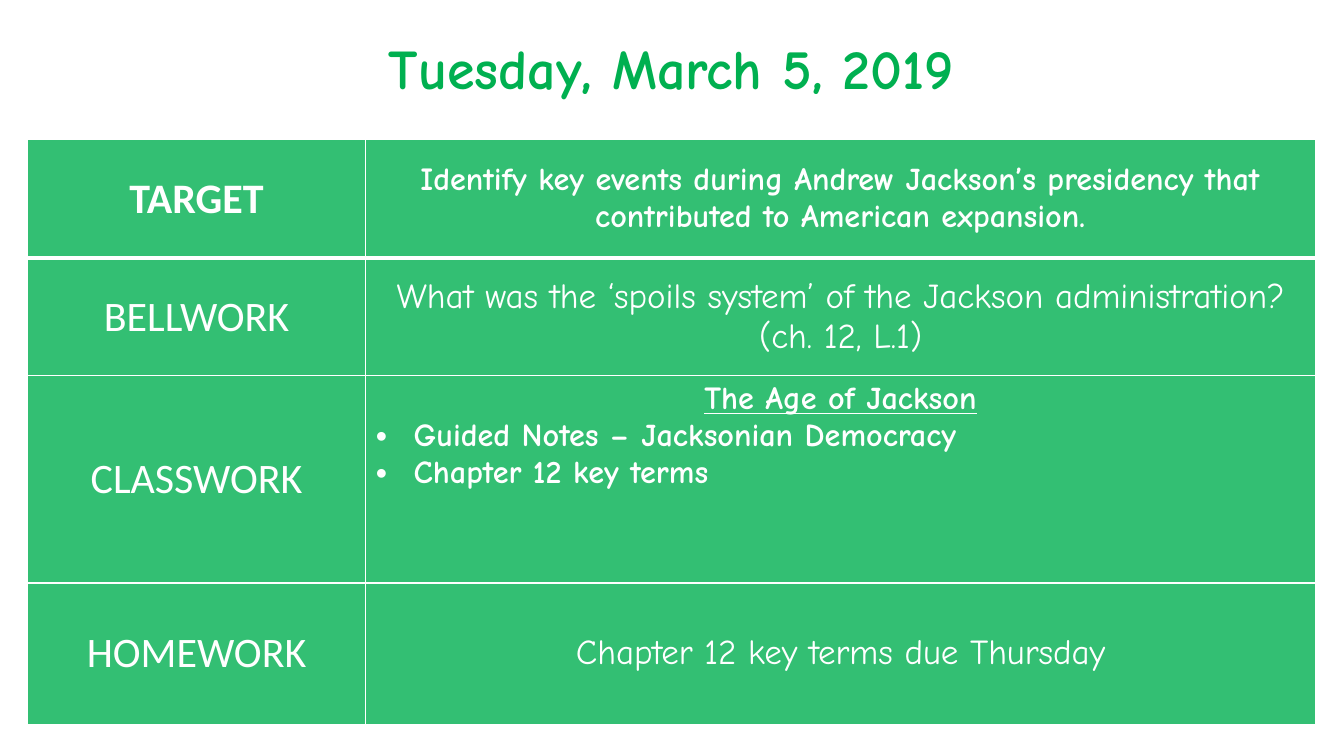
from lxml.etree import SubElement
from pptx import Presentation
from pptx.dml.color import RGBColor
from pptx.enum.text import MSO_ANCHOR, MSO_AUTO_SIZE, PP_ALIGN
from pptx.oxml import parse_xml
from pptx.oxml.ns import nsdecls, qn
from pptx.util import Cm, Pt

COLORS = {"green": "00B050", "white": "FFFFFF"}
LEFT, WIDTH = Cm(0.69), Cm(32.46)
COLS = [8.53, 23.93]
ROWS = [3, 2.95, 5.23, 3.56]

# Text formats
HEAD = {"name": "Comic Neue", "size": Pt(40), "bold": True}
LABEL = {"name": "Calibri", "size": Pt(30), "bold": False}
STRONG = {"name": "Comic Neue", "size": Pt(23), "bold": True}
PLAIN = {"name": "Comic Neue", "size": Pt(25), "bold": False}

# Each row: label, label format, then lines of (text, format, bulleted)
AGENDA = [
    ("TARGET", LABEL | {"bold": True},
     [("Identify key events during Andrew Jackson’s presidency that "
       "contributed to American expansion.", STRONG, False)]),
    ("BELLWORK", LABEL,
     [("What was the ‘spoils system’ of the Jackson administration? "
       "(ch. 12, L.1)", PLAIN, False)]),
    ("CLASSWORK", LABEL,
     [("The Age of Jackson", STRONG | {"underline": True}, False),
      ("Guided Notes – Jacksonian Democracy", STRONG, True),
      ("Chapter 12 key terms", STRONG, True)]),
    ("HOMEWORK", LABEL,
     [("Chapter 12 key terms due Thursday", PLAIN, False)]),
]


def paint(item, color, alpha, props):
    """Fill a shape or cell with a partly transparent colour."""
    item.fill.solid()
    item.fill.fore_color.rgb = RGBColor.from_string(COLORS[color])
    tone = props.find(qn("a:solidFill")).find(qn("a:srgbClr"))
    SubElement(tone, qn("a:alpha"), val=str(alpha * 1000))


def write(para, text, style, color):
    run = para.add_run()
    run.text = text
    for key, value in style.items():
        setattr(run.font, key, value)
    run.font.color.rgb = RGBColor.from_string(COLORS[color])
    para.alignment = PP_ALIGN.CENTER


def bullet(para):
    para.alignment = PP_ALIGN.LEFT
    props = para._p.get_or_add_pPr()
    props.set("marL", str(Cm(0.95)))
    props.set("indent", str(-Cm(0.95)))
    SubElement(props, qn("a:buFont"), typeface="Arial")
    SubElement(props, qn("a:buChar"), char="•")


def border(props, sides):
    """Draw white cell borders; sides maps each side to its points."""
    for spot, (side, width) in enumerate(sides.items()):
        props.insert(spot, parse_xml(
            f'<a:ln{side} {nsdecls("a")} w="{Pt(width)}"><a:solidFill>'
            f'<a:srgbClr val="{COLORS["white"]}"/></a:solidFill></a:ln{side}>'))


def fill_cell(cell, lines, top, base):
    props = cell._tc.get_or_add_tcPr()
    paint(cell, "green", 80, props)
    border(props, {"L": 1, "R": 1, "T": top, "B": base})
    cell.vertical_anchor = MSO_ANCHOR.TOP if len(lines) > 1 else MSO_ANCHOR.MIDDLE
    frame = cell.text_frame
    for spot, (text, style, listed) in enumerate(lines):
        para = frame.add_paragraph() if spot else frame.paragraphs[0]
        write(para, text, style, "white")
        if listed:
            bullet(para)


def add_title(slide, text):
    title = slide.shapes.title
    place = {"left": LEFT, "top": Cm(0.41), "width": WIDTH, "height": Cm(2.54)}
    for key, value in place.items():
        setattr(title, key, value)
    paint(title, "white", 65, title._element.spPr)
    frame = title.text_frame
    frame.auto_size = MSO_AUTO_SIZE.NONE
    frame.vertical_anchor = MSO_ANCHOR.MIDDLE
    write(frame.paragraphs[0], text, HEAD, "green")


def add_agenda(slide):
    table = slide.shapes.add_table(
        len(ROWS), len(COLS), LEFT, Cm(3.51), WIDTH, Cm(sum(ROWS))).table
    table.first_row = table.horz_banding = False
    for col, width in zip(table.columns, COLS):
        col.width = Cm(width)
    for spot, (label, style, lines) in enumerate(AGENDA):
        table.rows[spot].height = Cm(ROWS[spot])
        # A thick rule parts the target from the rest
        top, base = 3 if spot == 1 else 1, 3 if spot == 0 else 1
        fill_cell(table.cell(spot, 0), [(label, style, False)], top, base)
        fill_cell(table.cell(spot, 1), lines, top, base)


def main():
    deck = Presentation()
    deck.slide_width, deck.slide_height = Cm(33.87), Cm(19.05)
    slide = deck.slides.add_slide(deck.slide_layouts[5])
    add_title(slide, "Tuesday, March 5, 2019")
    add_agenda(slide)
    deck.save("out.pptx")


if __name__ == "__main__":
    main()
